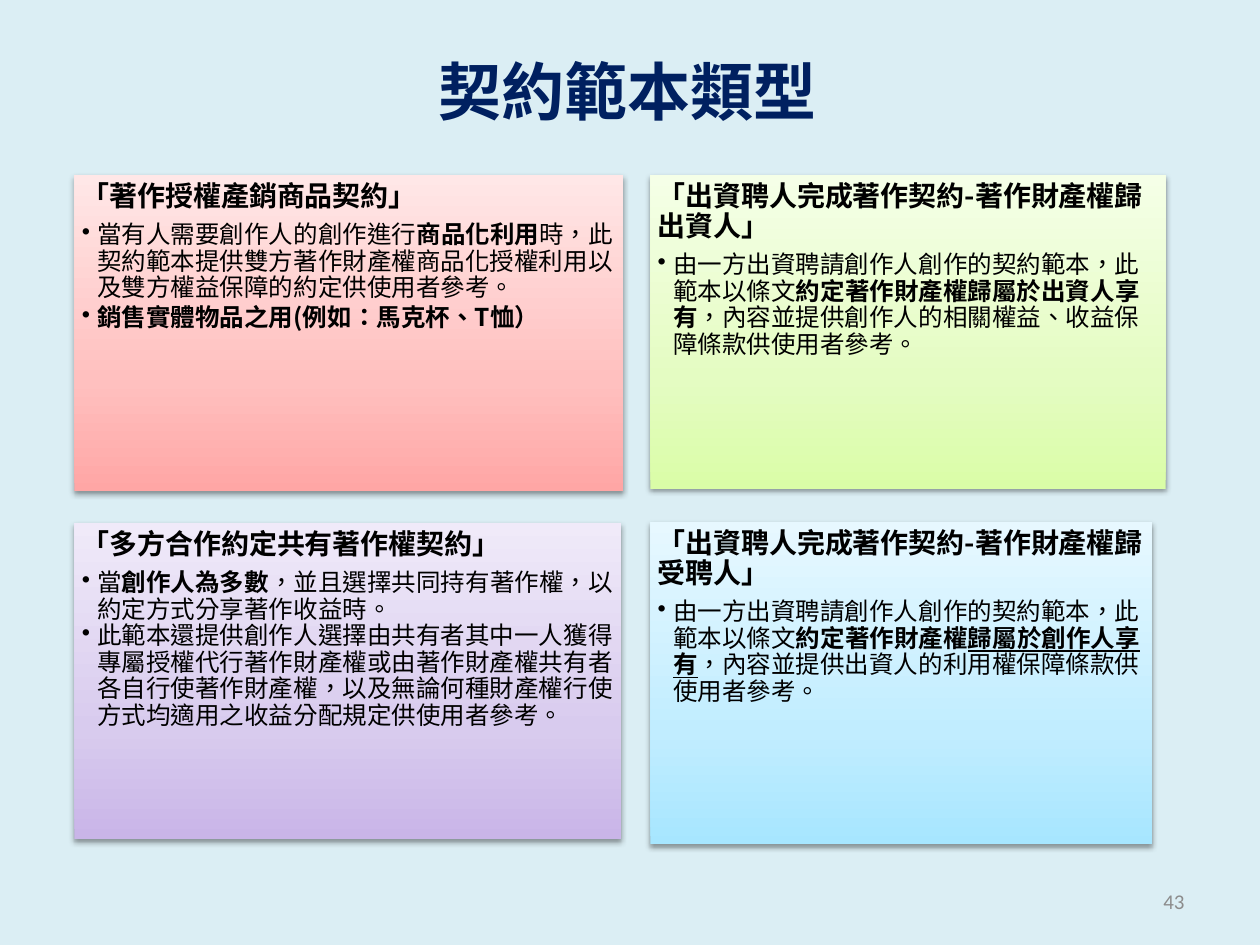
"""Build a slide of four cards describing types of model contracts."""
from lxml import etree
from pptx import Presentation
from pptx.dml.color import RGBColor
from pptx.enum.lang import MSO_LANGUAGE_ID as Language
from pptx.enum.shapes import MSO_SHAPE as Shape
from pptx.enum.text import MSO_ANCHOR as Anchor, PP_ALIGN as Align
from pptx.oxml.ns import qn
from pptx.util import Cm, Pt

BACKGROUND = RGBColor(0xDB, 0xEE, 0xF4)
NAVY = RGBColor(0x00, 0x20, 0x60)
BLACK = RGBColor(0x00, 0x00, 0x00)
GRAY = RGBColor(0x8C, 0x8C, 0x8C)
RED = (RGBColor(0xFF, 0xA6, 0xA5), RGBColor(0xFF, 0xC0, 0xBF), RGBColor(0xFF, 0xE7, 0xE7))
GREEN = (RGBColor(0xDA, 0xFD, 0xA7), RGBColor(0xE4, 0xFC, 0xC2), RGBColor(0xF5, 0xFF, 0xE7))
PURPLE = (RGBColor(0xC9, 0xB5, 0xE8), RGBColor(0xD8, 0xCB, 0xEE), RGBColor(0xF0, 0xEA, 0xF9))
BLUE = (RGBColor(0xA7, 0xE6, 0xFF), RGBColor(0xC1, 0xED, 0xFF), RGBColor(0xE7, 0xF8, 0xFF))
STOP_POSITIONS = (0, 35, 100)

CJK_FONT = "Noto Sans CJK SC"
LATIN_FONT = "Calibri"
PLAIN, BOLD, UNDERLINED = "plain", "bold", "underlined"

TITLE = "契約範本類型"
PAGE_NUMBER = "43"
LEFT, RIGHT = 1.5, 13.11
CARDS = [
    {
        "box": (LEFT, 3.53, 11.07, 6.37), "colors": RED, "gap": 2.1,
        "heading": "「著作授權產銷商品契約」",
        "bullets": [
            [("當有人需要創作人的創作進行", PLAIN), ("商品化利用", BOLD),
             ("時，此契約範本提供雙方著作財產權商品化授權利用以及雙方權益保障的約定供使用者參考。", PLAIN)],
            [("銷售實體物品之用(例如：馬克杯、T恤）", BOLD)],
        ],
    },
    {
        "box": (RIGHT, 3.53, 10.39, 6.32), "colors": GREEN, "gap": 2.1,
        "heading": "「出資聘人完成著作契約-著作財產權歸出資人」",
        "bullets": [
            [("由一方出資聘請創作人創作的契約範本，此範本以條文", PLAIN),
             ("約定著作財產權歸屬於出資人享有", BOLD),
             ("，內容並提供創作人的相關權益、收益保障條款供使用者參考。", PLAIN)],
        ],
    },
    {
        "box": (LEFT, 10.55, 11.02, 6.37), "colors": PURPLE, "gap": 0,
        "heading": "「多方合作約定共有著作權契約」",
        "bullets": [
            [("當", PLAIN), ("創作人為多數", BOLD),
             ("，並且選擇共同持有著作權，以約定方式分享著作收益時。", PLAIN)],
            [("此範本還提供創作人選擇由共有者其中一人獲得專屬授權代行著作財產權或由著作財產權共有者"
              "各自行使著作財產權，以及無論何種財產權行使方式均適用之收益分配規定供使用者參考。", PLAIN)],
        ],
    },
    {
        "box": (RIGHT, 10.52, 10.11, 6.5), "colors": BLUE, "gap": 2.1,
        "heading": "「出資聘人完成著作契約-著作財產權歸受聘人」",
        "bullets": [
            [("由一方出資聘請創作人創作的契約範本，此範本以條文", PLAIN),
             ("約定著作財產權", BOLD), ("歸屬於創作人享有", UNDERLINED),
             ("，內容並提供出資人的利用權保障條款供使用者參考。", PLAIN)],
        ],
    },
]


def add_child(parent, tag, **attributes):
    child = etree.SubElement(parent, qn(tag))
    for name, value in attributes.items():
        child.set(name, str(value))
    return child


def add_run(paragraph, text, size, color, style=PLAIN, font_name=CJK_FONT):
    run = paragraph.add_run()
    run.text = text
    font = run.font
    font.size = Pt(size)
    font.name = font_name
    font.bold = style != PLAIN
    font.underline = style == UNDERLINED
    font.color.rgb = color
    if font_name == CJK_FONT:
        font.language_id = Language.TRADITIONAL_CHINESE
        add_child(run._r.get_or_add_rPr(), "a:ea", typeface=font_name)


def paint_card(shape, colors):
    shape.line.fill.background()
    properties = shape._element.spPr
    gradient = etree.Element(qn("a:gradFill"), rotWithShape="1")
    stops = add_child(gradient, "a:gsLst")
    for position, color in zip(STOP_POSITIONS, colors):
        stop = add_child(stops, "a:gs", pos=position * 1000)
        add_child(stop, "a:srgbClr", val=color)
    add_child(gradient, "a:lin", ang=270 * 60000, scaled=1)
    properties.find(qn("a:ln")).addprevious(gradient)
    effects = add_child(properties, "a:effectLst")
    shadow = add_child(effects, "a:outerShdw", blurRad=Pt(3.1), dist=Pt(1.6),
                       dir=90 * 60000, rotWithShape=0)
    add_child(add_child(shadow, "a:srgbClr", val=BLACK), "a:alpha", val=38000)


def format_paragraph(paragraph, gap):
    paragraph.alignment = Align.LEFT
    paragraph.line_spacing = 0.9
    paragraph.space_after = Pt(gap)


def add_card(slide, card):
    shape = slide.shapes.add_shape(Shape.RECTANGLE, *map(Cm, card["box"]))
    paint_card(shape, card["colors"])
    frame = shape.text_frame
    frame.word_wrap = True
    frame.vertical_anchor = Anchor.TOP
    frame.margin_left = frame.margin_right = Cm(0.15)
    frame.margin_top = frame.margin_bottom = Cm(0.15)
    heading = frame.paragraphs[0]
    format_paragraph(heading, 5.6)
    add_run(heading, card["heading"], 16, BLACK, BOLD)
    for runs in card["bullets"]:
        paragraph = frame.add_paragraph()
        paragraph.level = 1
        format_paragraph(paragraph, card["gap"])
        properties = paragraph._p.get_or_add_pPr()
        properties.set("marL", str(Cm(0.31)))
        properties.set("indent", str(-Cm(0.31)))
        add_child(properties, "a:buChar", char="•")
        for text, style in runs:
            add_run(paragraph, text, 14, BLACK, style)


def add_label(slide, box, alignment, *run_settings):
    frame = slide.shapes.add_textbox(*map(Cm, box)).text_frame
    frame.word_wrap = alignment == Align.RIGHT
    frame.vertical_anchor = Anchor.MIDDLE if frame.word_wrap else Anchor.TOP
    paragraph = frame.paragraphs[0]
    paragraph.alignment = alignment
    add_run(paragraph, *run_settings)


def main():
    presentation = Presentation()
    presentation.slide_width, presentation.slide_height = Cm(25.4), Cm(19.05)
    slide = presentation.slides.add_slide(presentation.slide_layouts[6])
    slide.background.fill.solid()
    slide.background.fill.fore_color.rgb = BACKGROUND
    add_label(slide, (18.2, 17.66, 5.93, 1.01), Align.RIGHT,
              PAGE_NUMBER, 12, GRAY, PLAIN, LATIN_FONT)
    for card in CARDS:
        add_card(slide, card)
    add_label(slide, (8.59, 0.94, 8.2, 1.8), Align.LEFT, TITLE, 36, NAVY, BOLD)
    presentation.save("out.pptx")


if __name__ == "__main__":
    main()
